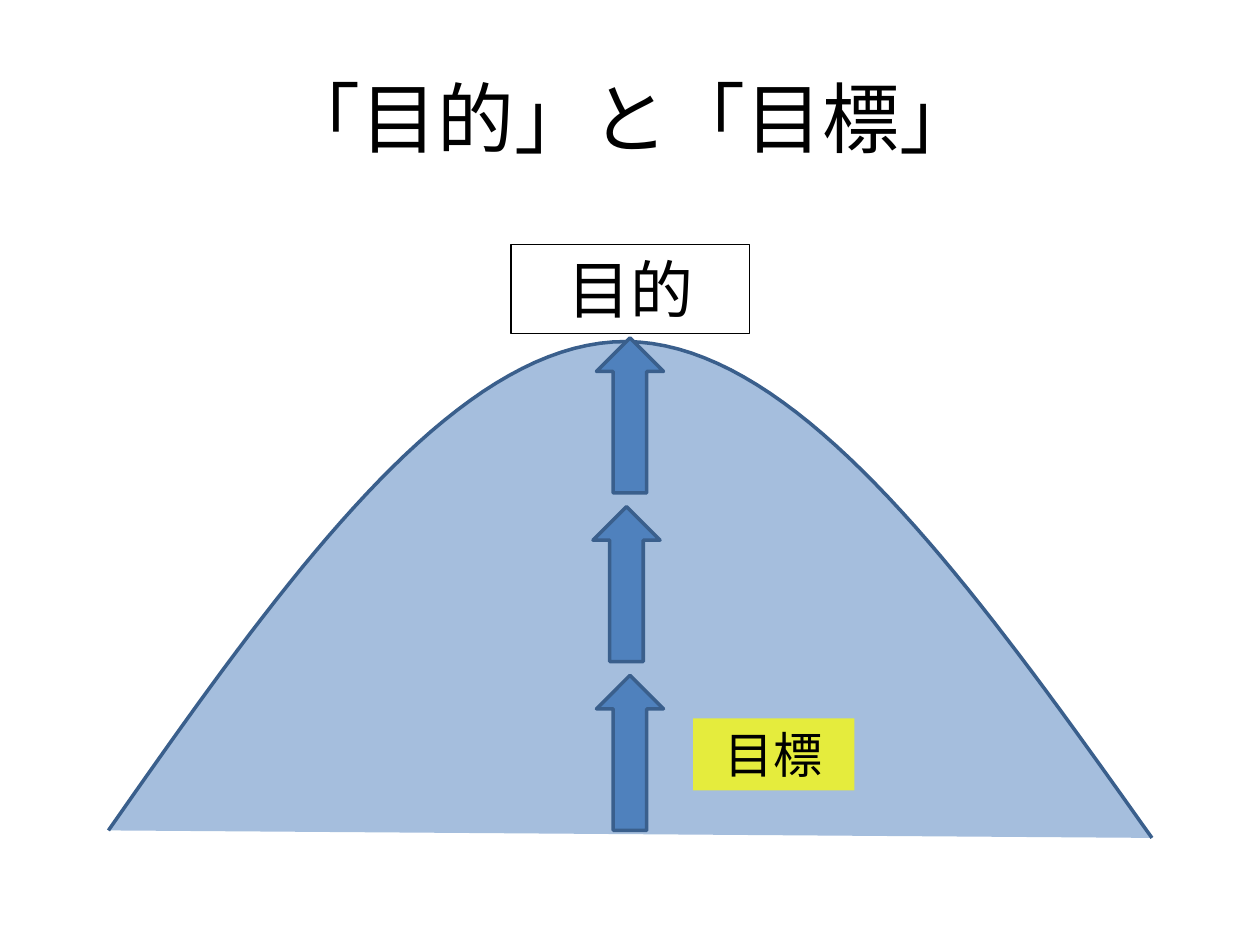
from lxml import etree
from pptx import Presentation
from pptx.dml.color import RGBColor
from pptx.enum.shapes import MSO_SHAPE
from pptx.enum.text import MSO_ANCHOR, PP_ALIGN
from pptx.oxml.ns import qn
from pptx.util import Pt

RECTANGLE = MSO_SHAPE.RECTANGLE
RIGHT_ARROW = MSO_SHAPE.RIGHT_ARROW
CENTER = PP_ALIGN.CENTER
TOP = MSO_ANCHOR.TOP
MIDDLE = MSO_ANCHOR.MIDDLE

FONT = "Karla"
BLACK, BLUE, DARK_BLUE, YELLOW = "000000", "4F81BD", "3A5F8C", "FFFF00"
CURVE_STEPS = 40


def color(value):
    return RGBColor.from_string(value)


def paint(shape, fill=None, opacity=100, line=None, line_width=1):
    shape.shadow.inherit = False
    if fill:
        shape.fill.solid()
        shape.fill.fore_color.rgb = color(fill)
        if opacity < 100:
            tint = shape.fill._xPr.find(qn("a:solidFill"))[0]
            etree.SubElement(tint, qn("a:alpha"), val=str(opacity * 1000))
    else:
        shape.fill.background()
    if line:
        shape.line.color.rgb = color(line)
        shape.line.width = Pt(line_width)
    else:
        shape.line.fill.background()


def write(shape, text, size, anchor=TOP):
    frame = shape.text_frame
    frame.word_wrap = True
    frame.vertical_anchor = anchor
    para = frame.paragraphs[0]
    para.alignment = CENTER
    span = para.add_run()
    span.text = text
    span.font.size = Pt(size)
    span.font.name = FONT
    span.font.color.rgb = color(BLACK)


def bezier(start, control_1, control_2, end):
    """Points along a cubic curve, without its start."""
    for step in range(1, CURVE_STEPS + 1):
        t = step / CURVE_STEPS
        weights = ((1 - t) ** 3, 3 * t * (1 - t) ** 2, 3 * t ** 2 * (1 - t), t ** 3)
        corners = (start, control_1, control_2, end)
        yield tuple(Pt(sum(w * corner[axis] for w, corner in zip(weights, corners)))
                    for axis in (0, 1))


def add_title(page, left, top, width, height):
    box = page.shapes.add_textbox(Pt(left), Pt(top), Pt(width), Pt(height))
    write(box, "「目的」と「目標」", 44, anchor=MIDDLE)


def add_mountain(page, left, top, width, height):
    def place(x, y):
        return left + x * width, top + y * height

    foot, peak, far_foot = place(0, 0.985), place(0.496, 0), place(1, 1)
    points = [
        *bezier(foot, place(0.164, 0.492), place(0.33, -0.002), peak),
        *bezier(peak, place(0.663, 0.002), place(0.832, 0.503), far_foot),
    ]
    builder = page.shapes.build_freeform(Pt(foot[0]), Pt(foot[1]))
    builder.add_line_segments(points, close=False)
    paint(builder.convert_to_shape(), BLUE, opacity=51, line=DARK_BLUE, line_width=2)


def add_label(page, left, top, width, height, text, size, **style):
    box = page.shapes.add_shape(RECTANGLE, Pt(left), Pt(top), Pt(width), Pt(height))
    paint(box, **style)
    write(box, text, size)


def add_step(page, center_x, center_y, length, thickness):
    arrow = page.shapes.add_shape(
        RIGHT_ARROW, Pt(center_x - length / 2), Pt(center_y - thickness / 2),
        Pt(length), Pt(thickness))
    arrow.rotation = 270
    paint(arrow, BLUE, line=DARK_BLUE, line_width=2)


def main():
    deck = Presentation()
    deck.slide_width, deck.slide_height = Pt(720), Pt(540)
    page = deck.slides.add_slide(deck.slide_layouts[6])

    add_title(page, 36, 21.6, 648, 90)
    add_mountain(page, 62, 195.2, 596.3, 283.6)

    # Purpose at the summit, goal beside the first step
    add_label(page, 292, 139.7, 136.2, 51, "目的", 36, line=BLACK, line_width=0.75)
    add_label(page, 396, 410.5, 92.2, 41.2, "目標", 28, fill=YELLOW, opacity=72)

    # Steps climbing to the summit
    for index, center_x in enumerate((360, 358, 360)):
        add_step(page, center_x, 430.2 - 96.4 * index, 88.6, 38.3)

    deck.save("out.pptx")


if __name__ == "__main__":
    main()
